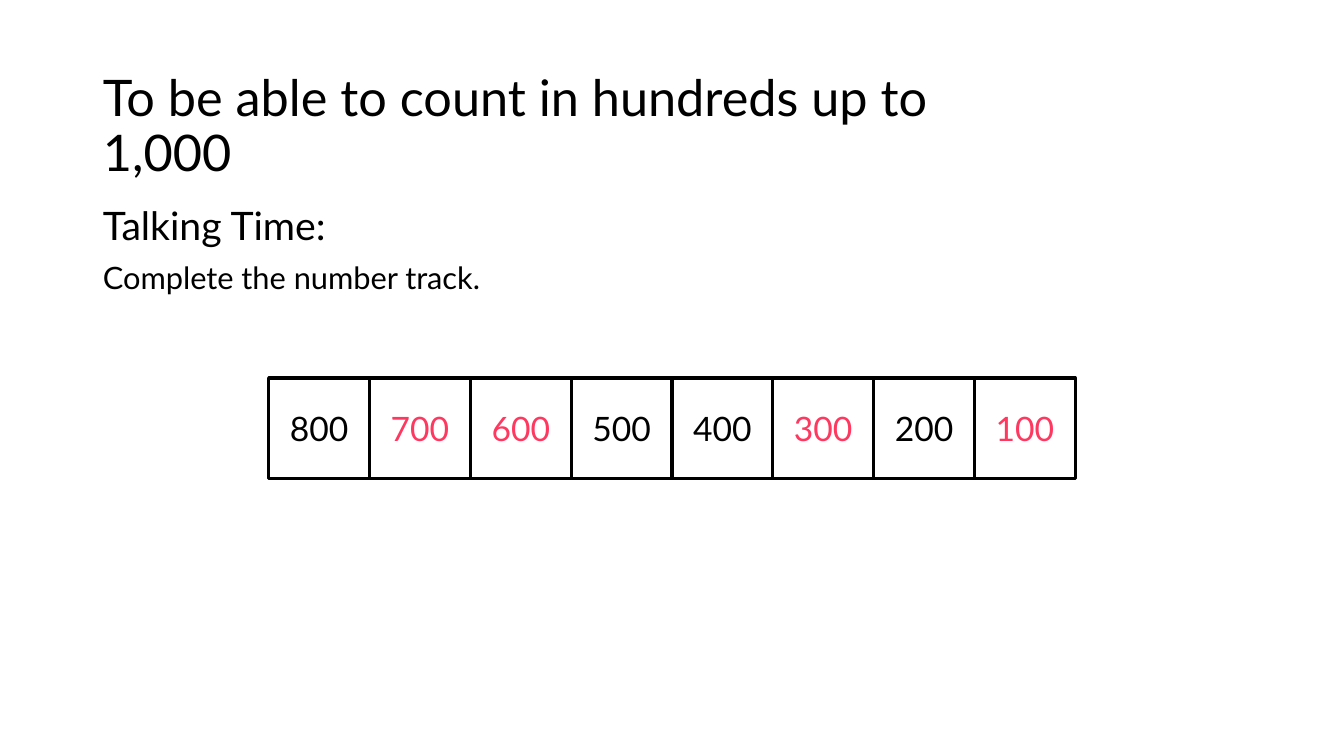
from dataclasses import dataclass

from lxml import etree
from pptx import Presentation
from pptx import util as u
from pptx.dml.color import RGBColor
from pptx.enum import shapes, text
from pptx.oxml.ns import qn


@dataclass(frozen=True)
class Theme:
    font: str = "Lato"
    ink: str = "000000"
    paper: str = "FFFFFF"
    answer: str = "FF3860"
    title: float = 36
    head: float = 28
    body: float = 22
    cell: float = 24
    rule: float = 2.25


THEME = Theme()
WIDE, HIGH = 13.33, 7.5
LEFT = 0.92
CELL = 1
TOP = HIGH / 2
TRACK = range(800, 0, -100)
HIDDEN = {700, 600, 300, 100}


def place(shape, left, top, width, height):
    shape.left, shape.top = u.Inches(left), u.Inches(top)
    shape.width, shape.height = u.Inches(width), u.Inches(height)


def style(para, size, color=THEME.ink, align=text.PP_ALIGN.LEFT):
    para.alignment = align
    para.font.name = THEME.font
    para.font.size = u.Pt(size)
    para.font.color.rgb = RGBColor.from_string(color)


def plain(para):
    props = para._p.get_or_add_pPr()
    props.set("marL", "0")
    props.set("indent", "0")
    etree.SubElement(props, qn("a:buNone"))


def add_title(slide, words):
    title = slide.shapes.title
    place(title, LEFT, 0.54, 9.6, 1.45)
    frame = title.text_frame
    frame.text = words
    frame.vertical_anchor = text.MSO_ANCHOR.MIDDLE
    para = frame.paragraphs[0]
    para.line_spacing = 0.9
    style(para, THEME.title)


def add_body(slide, lines):
    body = slide.placeholders[1]
    place(body, LEFT, 2, WIDE - 2 * LEFT, 4.76)
    frame = body.text_frame
    frame.text = "\n".join(words for words, size in lines)
    for row, (para, (words, size)) in enumerate(zip(frame.paragraphs, lines)):
        plain(para)
        para.line_spacing = 0.9
        para.space_before = u.Pt(10 if row else 0)
        style(para, size)


def add_cell(slide, left, value, color):
    cell = slide.shapes.add_shape(
        shapes.MSO_SHAPE.RECTANGLE,
        u.Inches(left), u.Inches(TOP), u.Inches(CELL), u.Inches(CELL))
    cell.shadow.inherit = False
    cell.fill.solid()
    cell.fill.fore_color.rgb = RGBColor.from_string(THEME.paper)
    cell.line.color.rgb = RGBColor.from_string(THEME.ink)
    cell.line.width = u.Pt(THEME.rule)
    frame = cell.text_frame
    frame.text = str(value)
    frame.vertical_anchor = text.MSO_ANCHOR.MIDDLE
    style(frame.paragraphs[0], THEME.cell, color, text.PP_ALIGN.CENTER)


def add_track(slide, values):
    start = (WIDE - CELL * len(values)) / 2
    for col, value in enumerate(values):
        color = THEME.answer if value in HIDDEN else THEME.ink
        add_cell(slide, start + col * CELL, value, color)


def main():
    deck = Presentation()
    deck.slide_width, deck.slide_height = u.Inches(WIDE), u.Inches(HIGH)
    slide = deck.slides.add_slide(deck.slide_layouts[1])
    add_title(slide, "To be able to count in hundreds up to 1,000")
    add_body(slide, [("Talking Time:", THEME.head),
                     ("Complete the number track.", THEME.body)])
    add_track(slide, TRACK)
    deck.save("out.pptx")


if __name__ == "__main__":
    main()
